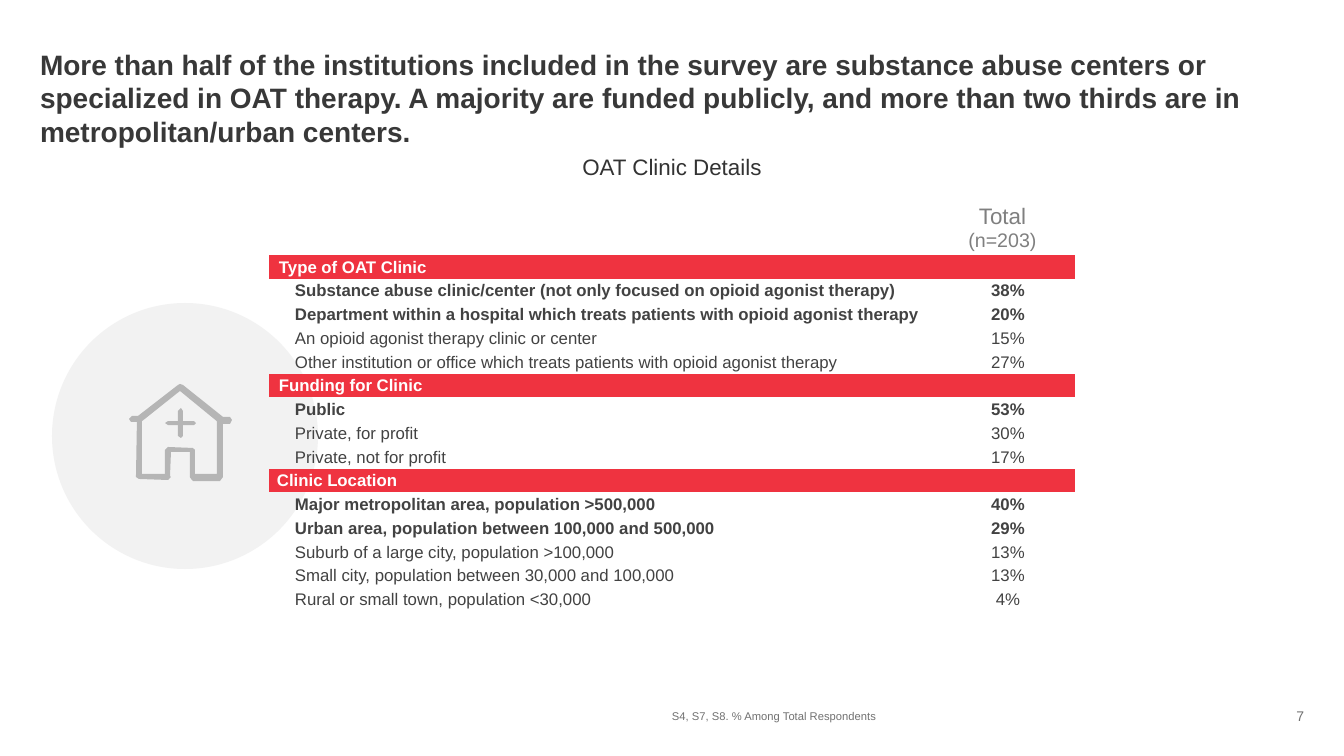
from dataclasses import dataclass

from lxml.etree import SubElement
from pptx import Presentation
from pptx.dml.color import RGBColor
from pptx.enum.shapes import MSO_SHAPE
from pptx.enum.text import MSO_ANCHOR, PP_ALIGN
from pptx.oxml.ns import qn
from pptx.util import Pt

EMU_PER_PX = 914400 / 100.8
NO_GRID_STYLE = "{2D5ABB26-0587-4C30-8999-92F81FD0307C}"


@dataclass(frozen=True)
class Theme:
    font: str = "Arial"
    title: str = "383838"
    subtitle: str = "333333"
    footer: str = "717171"
    header: str = "7F7F7F"
    body: str = "424242"
    section_text: str = "FFFFFF"
    section_fill: str = "EF3340"
    disc: str = "F2F2F2"
    icon: str = "B5B5B5"
    title_size: int = 20
    subtitle_size: int = 16
    base_size: int = 14
    table_size: int = 12
    number_size: int = 10
    note_size: int = 8


THEME = Theme()

# Section title, left margin in px, and rows of (label, share, bold)
SECTIONS = [
    ("Type of OAT Clinic", 10, [
        ("Substance abuse clinic/center (not only focused on opioid agonist therapy)", "38%", True),
        ("Department within a hospital which treats patients with opioid agonist therapy", "20%", True),
        ("An opioid agonist therapy clinic or center", "15%", False),
        ("Other institution or office which treats patients with opioid agonist therapy", "27%", False),
    ]),
    ("Funding for Clinic", 10, [
        ("Public", "53%", True),
        ("Private, for profit", "30%", False),
        ("Private, not for profit", "17%", False),
    ]),
    ("Clinic Location", 8, [
        ("Major metropolitan area, population >500,000", "40%", True),
        ("Urban area, population between 100,000 and 500,000", "29%", True),
        ("Suburb of a large city, population >100,000", "13%", False),
        ("Small city, population between 30,000 and 100,000", "13%", False),
        ("Rural or small town, population <30,000", "4%", False),
    ]),
]

# Outlines of the clinic icon, in px: walls, roof, door and cross
CLINIC_ICON = [
    [(137, 419), (140, 417), (142, 419), (142, 474), (168, 474), (171, 477),
     (168, 480), (139, 479), (136, 477)],
    [(220, 417), (223, 421), (223, 477), (220, 481), (193, 481), (190, 477),
     (193, 474), (217, 474), (217, 420)],
    [(180, 384), (183, 385), (223, 417), (230, 417), (232, 420), (230, 424),
     (221, 424), (219, 423), (180, 391), (141, 422), (131, 422), (129, 419),
     (132, 416), (138, 416), (178, 385)],
    [(168, 447), (193, 448), (195, 450), (195, 477), (192, 480), (190, 477),
     (190, 452), (171, 452), (170, 477), (168, 480), (165, 477), (165, 450)],
    [(168, 421), (194, 421), (196, 423), (194, 425), (168, 425), (165, 423)],
    [(181, 408), (183, 411), (183, 436), (181, 438), (178, 436), (178, 411)],
]


def px(length):
    return round(length * EMU_PER_PX)


def style_span(span, size, color, bold=False):
    span.font.name = THEME.font
    span.font.size = Pt(size)
    span.font.bold = bold
    span.font.color.rgb = RGBColor.from_string(color)


def paint(shape, color):
    shape.shadow.inherit = False
    shape.fill.solid()
    shape.fill.fore_color.rgb = RGBColor.from_string(color)
    shape.line.fill.background()


def add_text(slide, bounds, text, size, color, bold=False, align=PP_ALIGN.LEFT,
             anchor=MSO_ANCHOR.MIDDLE):
    """Add a text box without insets and return its paragraph."""
    box = slide.shapes.add_textbox(*map(px, bounds))
    frame = box.text_frame
    frame.word_wrap = True
    frame.vertical_anchor = anchor
    frame.margin_left = frame.margin_right = frame.margin_top = frame.margin_bottom = 0
    frame.text = text
    para = frame.paragraphs[0]
    para.alignment = align
    style_span(para.runs[0], size, color, bold)
    return para


def add_disc(slide, left, top, diameter):
    disc = slide.shapes.add_shape(MSO_SHAPE.OVAL, *map(px, (left, top, diameter, diameter)))
    paint(disc, THEME.disc)


def add_icon(slide, outlines):
    for start, *points in outlines:
        builder = slide.shapes.build_freeform(*start, scale=EMU_PER_PX)
        builder.add_line_segments(points, close=True)
        paint(builder.convert_to_shape(), THEME.icon)


def clear_cell(cell):
    """Remove fill and wide margins, and keep an empty cell as low as a text row."""
    cell.fill.background()
    cell.vertical_anchor = MSO_ANCHOR.MIDDLE
    cell.margin_left = cell.margin_right = cell.margin_top = px(1)
    cell.margin_bottom = 0
    SubElement(cell.text_frame.paragraphs[0]._p, qn("a:endParaRPr"),
               sz=str(THEME.table_size * 100))


def fill_cell(cell, text, color, bold=False, align=PP_ALIGN.LEFT, margin=1):
    para = cell.text_frame.paragraphs[0]
    para.text = text
    para.alignment = align
    cell.margin_left = px(margin)
    for span in para.runs:
        style_span(span, THEME.table_size, color, bold)
    return para


def add_clinic_table(slide):
    row_count = sum(1 + len(rows) for _, _, rows in SECTIONS)
    header_height, body_height = 55, 356
    widths = (661, 11, 134)
    frame = slide.shapes.add_table(
        row_count + 1, len(widths),
        *map(px, (269, 200, sum(widths), header_height + body_height)))
    table = frame.table
    table.first_row = table.horz_banding = False
    table._tbl.tblPr.find(qn("a:tableStyleId")).text = NO_GRID_STYLE
    for column, width in zip(table.columns, widths):
        column.width = px(width)
    for row in table.rows:
        row.height = px(body_height) // row_count
    table.rows[0].height = px(header_height)
    for cell in table.iter_cells():
        clear_cell(cell)

    table.cell(0, 1).merge(table.cell(0, 2))
    header = fill_cell(table.cell(0, 1), "Total\v(n=203)", THEME.header, align=PP_ALIGN.CENTER)
    for span, size in zip(header.runs, (THEME.subtitle_size, THEME.base_size)):
        span.font.size = Pt(size)

    index = 1
    for title, margin, rows in SECTIONS:
        section = table.cell(index, 0)
        section.merge(table.cell(index, 2))
        fill_cell(section, title, THEME.section_text, bold=True, margin=margin)
        section.fill.solid()
        section.fill.fore_color.rgb = RGBColor.from_string(THEME.section_fill)
        for index, (label, share, bold) in enumerate(rows, index + 1):
            fill_cell(table.cell(index, 0), label, THEME.body, bold, margin=26)
            fill_cell(table.cell(index, 2), share, THEME.body, bold, PP_ALIGN.CENTER)
        index += 1


def main():
    deck = Presentation()
    deck.slide_width, deck.slide_height = px(1344), px(756)
    slide = deck.slides.add_slide(deck.slide_layouts[6])
    add_text(slide, (1197, 705, 107, 22), "7", THEME.number_size, THEME.footer,
             align=PP_ALIGN.RIGHT)
    title = add_text(
        slide, (40, 47, 1264, 78),
        "More than half of the institutions included in the survey are substance abuse centers "
        "or specialized in OAT therapy. A majority are funded publicly, and more than two thirds "
        "are in metropolitan/urban centers.",
        THEME.title_size, THEME.title, bold=True, anchor=MSO_ANCHOR.TOP)
    title.space_before = Pt(6)
    add_text(slide, (672, 705, 515, 22), "S4, S7, S8. % Among Total Respondents",
             THEME.note_size, THEME.footer)
    subtitle = add_text(slide, (0, 151, 1344, 34), "OAT Clinic Details",
                        THEME.subtitle_size, THEME.subtitle, align=PP_ALIGN.CENTER)
    subtitle.line_spacing = 0.9
    add_disc(slide, 52, 303, 266)
    add_clinic_table(slide)
    add_icon(slide, CLINIC_ICON)
    deck.save("out.pptx")


if __name__ == "__main__":
    main()
